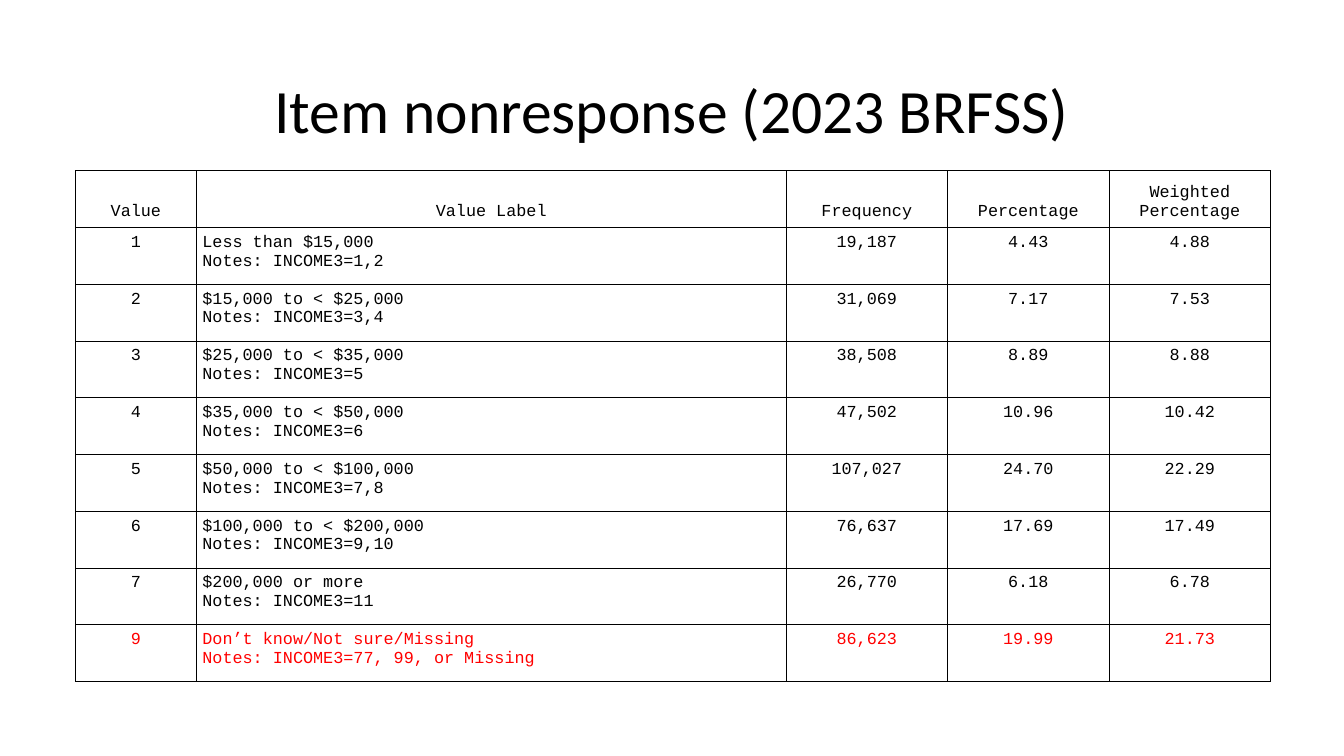
from dataclasses import dataclass
from copy import deepcopy

from lxml import etree
from pptx import Presentation
from pptx.dml.color import RGBColor
from pptx.enum.text import MSO_ANCHOR, PP_ALIGN
from pptx.oxml.ns import qn
from pptx.slide import Slide
from pptx.table import _Cell
from pptx.text.text import _Paragraph
from pptx.util import Cm, Pt

LEFT, CENTER = PP_ALIGN.LEFT, PP_ALIGN.CENTER
TOP, MIDDLE, BOTTOM = MSO_ANCHOR.TOP, MSO_ANCHOR.MIDDLE, MSO_ANCHOR.BOTTOM


@dataclass(frozen=True)
class Theme:
    title_font: str = "Calibri"
    table_font: str = "Courier New"
    title_size: Pt = Pt(44)
    table_size: Pt = Pt(12)
    border_width: Pt = Pt(0.6)
    ink: str = "000000"
    missing: str = "FF0000"
    paper: str = "FFFFFF"


@dataclass(frozen=True)
class IncomeRow:
    value: str
    label: str
    codes: str
    frequency: str
    percentage: str
    weighted: str
    color: str = Theme.ink

    def texts(self) -> list[str]:
        label = f"{self.label}\nNotes: INCOME3={self.codes}"
        return [self.value, label, self.frequency, self.percentage, self.weighted]


THEME = Theme()
HEADINGS = ["Value", "Value Label", "Frequency", "Percentage", "Weighted Percentage"]
COLUMN_WIDTHS = [3.05, 14.86, 4.07, 4.07, 4.07]
LABEL_COLUMN = 1
ROW_HEIGHT = 1.43
CELL_MARGIN = Cm(0.15)
INCOME_ROWS = [
    IncomeRow("1", "Less than $15,000", "1,2", "19,187", "4.43", "4.88"),
    IncomeRow("2", "$15,000 to < $25,000", "3,4", "31,069", "7.17", "7.53"),
    IncomeRow("3", "$25,000 to < $35,000", "5", "38,508", "8.89", "8.88"),
    IncomeRow("4", "$35,000 to < $50,000", "6", "47,502", "10.96", "10.42"),
    IncomeRow("5", "$50,000 to < $100,000", "7,8", "107,027", "24.70", "22.29"),
    IncomeRow("6", "$100,000 to < $200,000", "9,10", "76,637", "17.69", "17.49"),
    IncomeRow("7", "$200,000 or more", "11", "26,770", "6.18", "6.78"),
    IncomeRow("9", "Don’t know/Not sure/Missing", "77, 99, or Missing",
              "86,623", "19.99", "21.73", THEME.missing),
]


def add_text(p: _Paragraph, text: str, font: str, size: Pt, color: str) -> None:
    """Add one run per line; each line break takes the format of the run before it."""
    for i, line in enumerate(text.split("\n")):
        if i:
            p.add_line_break()
            p._p[-1].append(deepcopy(r._r.rPr))
        r = p.add_run()
        r.text = line
        r.font.name = font
        r.font.size = size
        r.font.color.rgb = RGBColor.from_string(color)


def add_borders(cell: _Cell) -> None:
    tc_pr = cell._tc.get_or_add_tcPr()
    for side in ("lnL", "lnR", "lnT", "lnB"):
        line = etree.SubElement(tc_pr, qn(f"a:{side}"), w=str(THEME.border_width))
        fill = etree.SubElement(line, qn("a:solidFill"))
        etree.SubElement(fill, qn("a:srgbClr"), val=THEME.ink)


def fill_cell(cell: _Cell, text: str, align: PP_ALIGN, anchor: MSO_ANCHOR, color: str) -> None:
    cell.margin_left = cell.margin_right = CELL_MARGIN
    cell.margin_top = cell.margin_bottom = CELL_MARGIN
    cell.vertical_anchor = anchor
    p = cell.text_frame.paragraphs[0]
    p.alignment = align
    add_text(p, text, THEME.table_font, THEME.table_size, color)
    add_borders(cell)
    cell.fill.solid()
    cell.fill.fore_color.rgb = RGBColor.from_string(THEME.paper)


def add_title(s: Slide, text: str) -> None:
    tf = s.shapes.add_textbox(Cm(2.33), Cm(1.01), Cm(29.21), Cm(3.68)).text_frame
    tf.word_wrap = True
    tf.vertical_anchor = MIDDLE
    p = tf.paragraphs[0]
    p.alignment = CENTER
    p.line_spacing = 0.9
    add_text(p, text, THEME.title_font, THEME.title_size, THEME.ink)


def add_income_table(s: Slide) -> None:
    row_count = len(INCOME_ROWS) + 1
    table = s.shapes.add_table(
        row_count, len(HEADINGS), Cm(1.9), Cm(4.3),
        Cm(sum(COLUMN_WIDTHS)), Cm(ROW_HEIGHT * row_count)).table
    table.first_row = table.horz_banding = False
    for column, width in zip(table.columns, COLUMN_WIDTHS):
        column.width = Cm(width)
    for row in table.rows:
        row.height = Cm(ROW_HEIGHT)
    for c, heading in enumerate(HEADINGS):
        fill_cell(table.cell(0, c), heading, CENTER, BOTTOM, THEME.ink)
    for r, income in enumerate(INCOME_ROWS, start=1):
        for c, text in enumerate(income.texts()):
            align = LEFT if c == LABEL_COLUMN else CENTER
            fill_cell(table.cell(r, c), text, align, TOP, income.color)


def main() -> None:
    prs = Presentation()
    prs.slide_width, prs.slide_height = Cm(33.87), Cm(19.05)
    s = prs.slides.add_slide(prs.slide_layouts[6])
    add_title(s, "Item nonresponse (2023 BRFSS)")
    add_income_table(s)
    prs.save("out.pptx")


if __name__ == "__main__":
    main()
